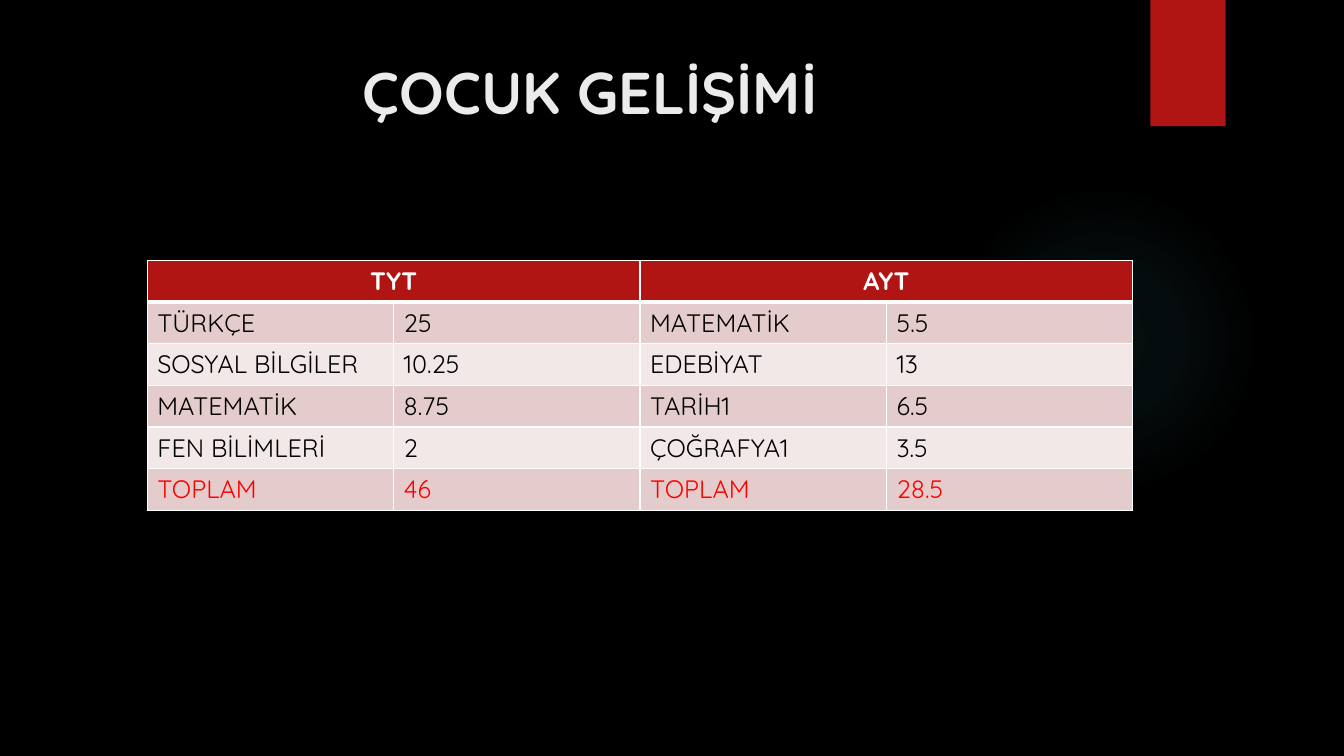
"""Build the slide with the TYT and AYT net scores for child development."""
import pptx
import pptx.dml.color
import pptx.enum.shapes
import pptx.enum.text
import pptx.oxml
import pptx.oxml.ns
import pptx.util

Cm = pptx.util.Cm
Pt = pptx.util.Pt
RGBColor = pptx.dml.color.RGBColor
MSO_SHAPE = pptx.enum.shapes.MSO_SHAPE
PP_ALIGN = pptx.enum.text.PP_ALIGN

TITLE = "ÇOCUK GELİŞİMİ"
EXAMS = ["TYT", "AYT"]
SCORES = [
    ("TÜRKÇE", "25", "MATEMATİK", "5.5"),
    ("SOSYAL BİLGİLER", "10.25", "EDEBİYAT", "13"),
    ("MATEMATİK", "8.75", "TARİH1", "6.5"),
    ("FEN BİLİMLERİ", "2", "ÇOĞRAFYA1", "3.5"),
    ("TOPLAM", "46", "TOPLAM", "28.5"),
]

FONT = "Quicksand"
BLACK = RGBColor(0x00, 0x00, 0x00)
WHITE = RGBColor(0xFF, 0xFF, 0xFF)
LIGHT = RGBColor(0xEB, 0xEB, 0xEB)
RED = RGBColor(0xB0, 0x15, 0x13)
TOTAL_RED = RGBColor(0xFF, 0x00, 0x00)
GLOW = RGBColor(0x50, 0xB9, 0xC1)
BANDS = [RGBColor(0xE4, 0xCC, 0xCC), RGBColor(0xF2, 0xE8, 0xE7)]
GLOW_STOPS = [(0, 7), (36, 6), (69, 0)]

COL_W, ROW_H = Cm(6.21), Cm(1.05)
NS = pptx.oxml.ns.nsdecls("a")


def add_plain_shape(slide, kind, left, top, width, height, color):
    sp = slide.shapes.add_shape(kind, left, top, width, height)
    sp.shadow.inherit = False
    sp.fill.solid()
    sp.fill.fore_color.rgb = color
    sp.line.fill.background()
    return sp


def set_glow(sp):
    stops = "".join(
        f'<a:gs pos="{pos * 1000}"><a:srgbClr val="{GLOW}">'
        f'<a:alpha val="{alpha * 1000}"/></a:srgbClr></a:gs>'
        for pos, alpha in GLOW_STOPS
    )
    grad = pptx.oxml.parse_xml(
        f'<a:gradFill {NS}><a:gsLst>{stops}</a:gsLst><a:path path="circle">'
        '<a:fillToRect l="50000" t="50000" r="50000" b="50000"/></a:path></a:gradFill>'
    )
    solid = sp.element.spPr.find(pptx.oxml.ns.qn("a:solidFill"))
    sp.element.spPr.replace(solid, grad)


def write_text(tf, text, size, color, bold, align):
    tf.text = text
    p = tf.paragraphs[0]
    p.alignment = align
    font = p.runs[0].font
    font.name, font.size, font.bold = FONT, Pt(size), bold
    font.color.rgb = color


def style_cell(cell, fill, top, bottom):
    tcPr = cell._tc.get_or_add_tcPr()
    for side, width in (("L", 1), ("R", 1), ("T", top), ("B", bottom)):
        tcPr.append(pptx.oxml.parse_xml(
            f'<a:ln{side} {NS} w="{Pt(width)}"><a:solidFill>'
            f'<a:srgbClr val="{WHITE}"/></a:solidFill></a:ln{side}>'
        ))
    cell.fill.solid()
    cell.fill.fore_color.rgb = fill


def add_scores(slide):
    rows, cols = len(SCORES) + 1, len(SCORES[0])
    table = slide.shapes.add_table(
        rows, cols, Cm(3.71), Cm(6.56), COL_W * cols, ROW_H * rows).table
    for col in table.columns:
        col.width = COL_W
    for row in table.rows:
        row.height = ROW_H
    for c in range(cols):
        style_cell(table.cell(0, c), RED, 1, 3)
    for i, exam in enumerate(EXAMS):
        head = table.cell(0, 2 * i)
        head.merge(table.cell(0, 2 * i + 1))
        write_text(head.text_frame, exam, 18, WHITE, True, PP_ALIGN.CENTER)
    for r, values in enumerate(SCORES, 1):
        color = TOTAL_RED if r == len(SCORES) else BLACK
        for c, value in enumerate(values):
            cell = table.cell(r, c)
            style_cell(cell, BANDS[(r - 1) % 2], 3 if r == 1 else 1, 1)
            write_text(cell.text_frame, value, 18, color, False, PP_ALIGN.LEFT)


def main():
    prs = pptx.Presentation()
    prs.slide_width, prs.slide_height = Cm(33.87), Cm(19.05)
    slide = prs.slides.add_slide(prs.slide_layouts[6])
    slide.background.fill.solid()
    slide.background.fill.fore_color.rgb = BLACK

    glow = add_plain_shape(
        slide, MSO_SHAPE.OVAL, Cm(23.9), Cm(4.65), Cm(7.82), Cm(7.82), GLOW)
    set_glow(glow)
    add_plain_shape(
        slide, MSO_SHAPE.RECTANGLE, Cm(28.99), Cm(0), Cm(1.9), Cm(3.18), RED)

    title = slide.shapes.add_textbox(Cm(1.8), Cm(1.27), Cm(26.14), Cm(3.89))
    title.text_frame.word_wrap = True
    write_text(title.text_frame, TITLE, 42, LIGHT, True, PP_ALIGN.CENTER)
    add_scores(slide)
    prs.save("out.pptx")


if __name__ == "__main__":
    main()
